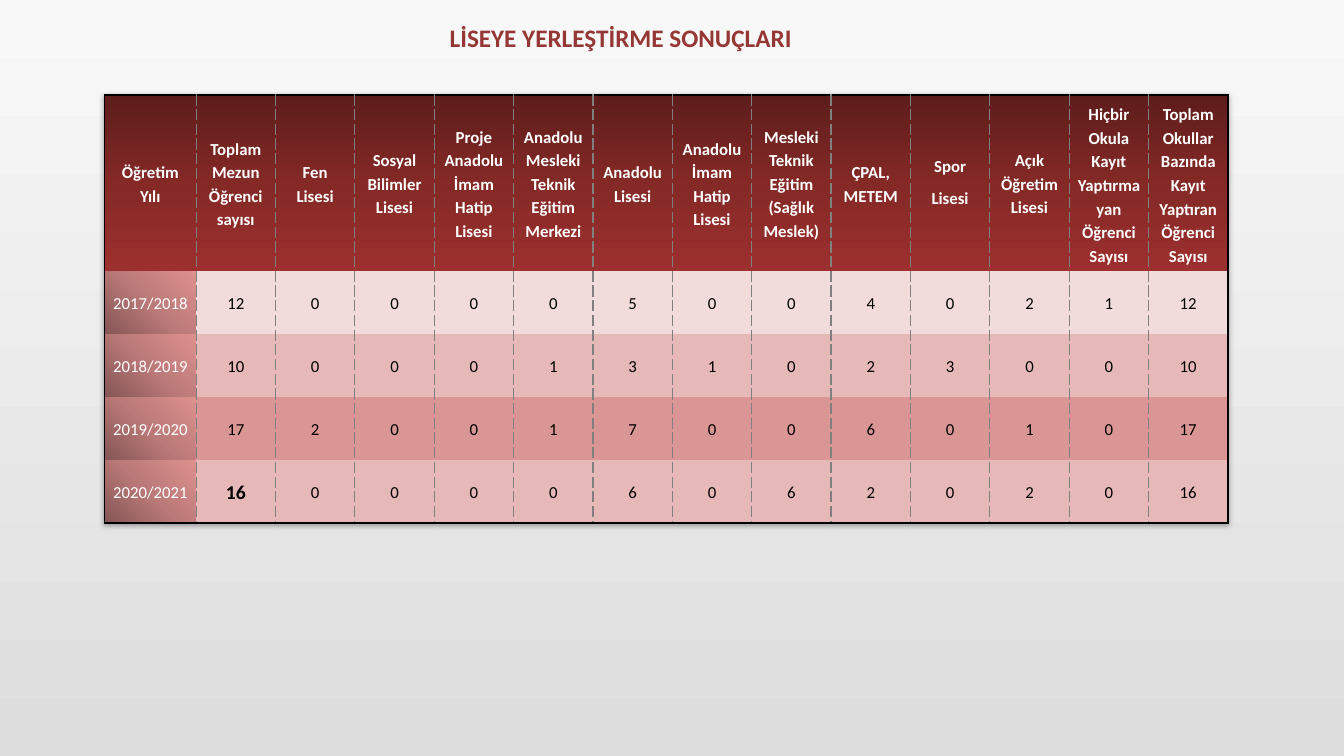
from dataclasses import dataclass

from lxml.etree import SubElement
from pptx import Presentation
from pptx.dml.color import RGBColor
from pptx.enum.text import MSO_ANCHOR, MSO_AUTO_SIZE, PP_ALIGN
from pptx.oxml import parse_xml
from pptx.oxml.ns import nsdecls, qn
from pptx.util import Pt

TITLE = "LİSEYE YERLEŞTİRME SONUÇLARI"
HEADINGS = [
    "Öğretim Yılı", "Toplam Mezun Öğrenci sayısı", "Fen Lisesi",
    "Sosyal Bilimler Lisesi", "Proje Anadolu İmam Hatip Lisesi",
    "Anadolu Mesleki Teknik Eğitim Merkezi", "Anadolu Lisesi",
    "Anadolu İmam Hatip Lisesi", "Mesleki Teknik Eğitim (Sağlık Meslek)",
    "ÇPAL, METEM", "Spor\nLisesi", "Açık Öğretim Lisesi",
    "Hiçbir Okula Kayıt Yaptırmayan Öğrenci Sayısı",
    "Toplam Okullar Bazında Kayıt Yaptıran Öğrenci Sayısı",
]
RESULTS = {
    "2017/2018": [12, 0, 0, 0, 0, 5, 0, 0, 4, 0, 2, 1, 12],
    "2018/2019": [10, 0, 0, 0, 1, 3, 1, 0, 2, 3, 0, 0, 10],
    "2019/2020": [17, 2, 0, 0, 1, 7, 0, 0, 6, 0, 1, 0, 17],
    "2020/2021": [16, 0, 0, 0, 0, 6, 0, 6, 2, 0, 2, 0, 16],
}
SPORT_COLUMN = HEADINGS.index("Spor\nLisesi")
HIGHLIGHT = (len(RESULTS), 1)


@dataclass(frozen=True)
class Theme:
    font: str = "Calibri"
    title: str = "953735"
    light: str = "FFFFFF"
    dark: str = "000000"
    divider: str = "808080"
    page: tuple = ("F8F8F8", "DDDDDD")
    heading: tuple = ("5D1D1B", "842926", "9C302E")
    year: tuple = ("845655", "BB7A79", "DE918F")
    bands: tuple = ("F2DCDB", "E6B9B8", "D99694", "E6B9B8")
    title_size: int = 18
    text_size: int = 12
    highlight_size: int = 14


THEME = Theme()
LEFT, TOP = 74.7, 67.8
YEAR_WIDTH, COLUMN_WIDTH = 65.4, 56.7
HEADING_HEIGHT, ROW_HEIGHT = 125.6, 45


def assign(target, values):
    for name, value in values.items():
        setattr(target, name, value)


def margins(side, top, bottom):
    return {"margin_left": Pt(side), "margin_right": Pt(side),
            "margin_top": Pt(top), "margin_bottom": Pt(bottom)}


def write(frame, text, color, size, bold, align, spacing=1.15, after=8):
    frame.text = text
    for para in frame.paragraphs:
        assign(para, {"alignment": align, "line_spacing": spacing, "space_after": Pt(after)})
        for span in para.runs:
            assign(span.font, {"name": THEME.font, "size": Pt(size), "bold": bold})
            span.font.color.rgb = RGBColor.from_string(color)


def add_solid(parent, color):
    fill = SubElement(parent, qn("a:solidFill"))
    SubElement(fill, qn("a:srgbClr"), val=color)


def add_gradient(parent, colors, angle):
    """Spread the colours evenly; the angle runs clockwise in degrees."""
    fill = SubElement(parent, qn("a:gradFill"), rotWithShape="1")
    stops = SubElement(fill, qn("a:gsLst"))
    for index, color in enumerate(colors):
        position = 100000 * index // (len(colors) - 1)
        stop = SubElement(stops, qn("a:gs"), pos=str(position))
        SubElement(stop, qn("a:srgbClr"), val=color)
    SubElement(fill, qn("a:lin"), ang=str(angle * 60000), scaled="0")


def add_borders(properties, row, column, last_row, last_column):
    """Black frame outside, dashed dividers between columns, nothing between rows."""
    outer = {"L": column == 0, "R": column == last_column,
             "T": row == 0, "B": row == last_row}
    for side, is_outer in outer.items():
        line = SubElement(properties, qn(f"a:ln{side}"), w=str(Pt(1)))
        if is_outer:
            add_solid(line, THEME.dark)
        elif side in "LR":
            add_solid(line, THEME.divider)
            SubElement(line, qn("a:prstDash"), val="sysDash")
        else:
            SubElement(line, qn("a:noFill"))


def fill_cell(cell, text, row, column):
    is_heading, is_year = row == 0, column == 0
    highlighted = (row, column) == HIGHLIGHT
    layout = {}
    if highlighted:
        edges = margins(1, 1, 0)
        layout = {"spacing": None, "after": 0}
    elif column == SPORT_COLUMN:
        edges = margins(5, 0, 0)
        layout = {"spacing": None} if is_heading else {}
    else:
        edges = margins(5, 5, 5)
    assign(cell, {"vertical_anchor": MSO_ANCHOR.MIDDLE, **edges})
    write(cell.text_frame, text,
          THEME.light if is_heading or is_year else THEME.dark,
          THEME.highlight_size if highlighted else THEME.text_size,
          is_heading or highlighted, PP_ALIGN.CENTER, **layout)

    properties = cell._tc.get_or_add_tcPr()
    add_borders(properties, row, column, len(RESULTS), len(HEADINGS) - 1)
    if is_heading:
        add_gradient(properties, THEME.heading, 90)
    elif is_year:
        add_gradient(properties, THEME.year, 315)
    else:
        add_solid(properties, THEME.bands[row - 1])


def add_results(page):
    rows = [HEADINGS] + [[year, *counts] for year, counts in RESULTS.items()]
    widths = [YEAR_WIDTH] + [COLUMN_WIDTH] * (len(HEADINGS) - 1)
    heights = [HEADING_HEIGHT] + [ROW_HEIGHT] * len(RESULTS)
    table = page.shapes.add_table(len(rows), len(widths), Pt(LEFT), Pt(TOP),
                                  Pt(sum(widths)), Pt(sum(heights))).table
    assign(table, {"first_row": False, "horz_banding": False})
    for column, width in zip(table.columns, widths):
        column.width = Pt(width)
    for row, height in zip(table.rows, heights):
        row.height = Pt(height)
    for row, values in enumerate(rows):
        for column, value in enumerate(values):
            fill_cell(table.cell(row, column), str(value), row, column)
    table._tbl.tblPr.insert(0, parse_xml(
        f'<a:effectLst {nsdecls("a")}><a:outerShdw blurRad="50800" dist="12700" dir="5400000">'
        f'<a:srgbClr val="{THEME.dark}"><a:alpha val="35000"/></a:srgbClr>'
        '</a:outerShdw></a:effectLst>'))


def add_title(page):
    box = page.shapes.title
    assign(box, {"left": Pt(314), "top": Pt(9.4), "width": Pt(261.4), "height": Pt(32.4)})
    assign(box.text_frame, {"word_wrap": False, "vertical_anchor": MSO_ANCHOR.TOP,
                            "auto_size": MSO_AUTO_SIZE.SHAPE_TO_FIT_TEXT,
                            **margins(7.2, 3.6, 3.6)})
    write(box.text_frame, TITLE, THEME.title, THEME.title_size, True, PP_ALIGN.LEFT)


def main():
    deck = Presentation()
    assign(deck, {"slide_width": Pt(960), "slide_height": Pt(540)})
    page = deck.slides.add_slide(deck.slide_layouts.get_by_name("Title Only"))
    backdrop = page.background.fill
    backdrop.gradient()
    backdrop.gradient_angle = 270
    for stop, color in zip(backdrop.gradient_stops, THEME.page):
        stop.color.rgb = RGBColor.from_string(color)
    add_title(page)
    add_results(page)
    deck.save("out.pptx")


if __name__ == "__main__":
    main()
